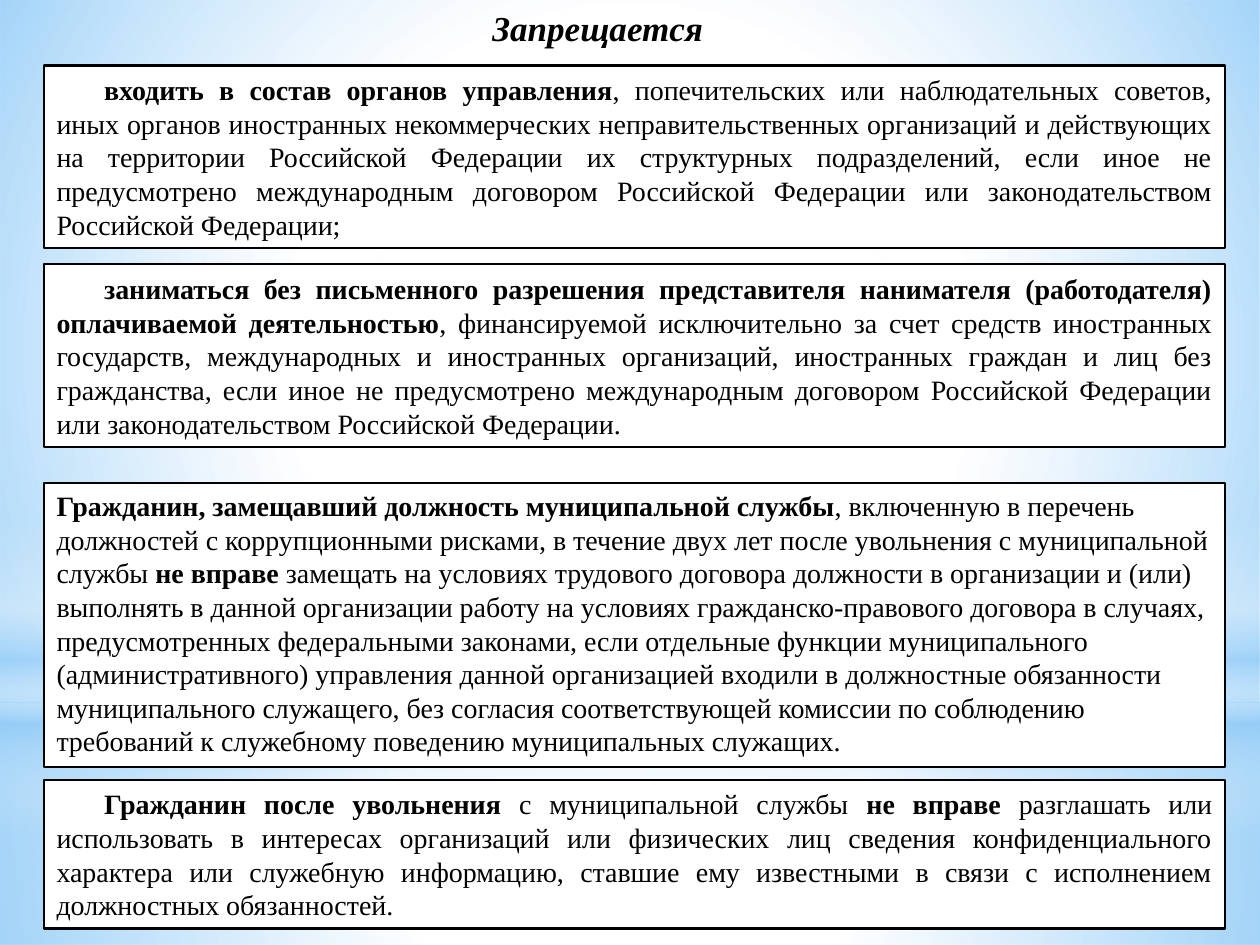
"""Build the slide on bans and limits in municipal service."""
from dataclasses import dataclass

from lxml import etree
from pptx import Presentation
from pptx.dml.color import RGBColor
from pptx.enum.shapes import MSO_SHAPE
from pptx.enum.text import MSO_ANCHOR, MSO_AUTO_SIZE, PP_ALIGN
from pptx.oxml.ns import qn
from pptx.util import Cm, Pt

RECT, OVAL = MSO_SHAPE.RECTANGLE, MSO_SHAPE.OVAL
TOP, MIDDLE = MSO_ANCHOR.TOP, MSO_ANCHOR.MIDDLE
LEFT, CENTER, JUSTIFY = PP_ALIGN.LEFT, PP_ALIGN.CENTER, PP_ALIGN.JUSTIFY
FIT = MSO_AUTO_SIZE.SHAPE_TO_FIT_TEXT
BLACK = RGBColor(0, 0, 0)
WHITE = RGBColor(255, 255, 255)
SKY = RGBColor(0x8B, 0xC9, 0xF7)
FONT = "Times New Roman"
WIDE, HIGH = 25.4, 19.05
EDGE, SPAN = 0.89, 23.8


@dataclass
class Glow:
    kind: MSO_SHAPE
    top: float
    height: float
    stops: list[tuple[int, RGBColor, int]]
    round: bool = True


@dataclass
class Rule:
    top: float
    height: float
    texts: list[str]
    inset: bool = True


GLOWS = [
    Glow(RECT, 14.17, 4.88, [(0, WHITE, 91), (37, WHITE, 76), (100, SKY, 79)]),
    Glow(RECT, 0, 14.17, [(0, WHITE, 89), (48, WHITE, 62), (100, SKY, 79)]),
    Glow(RECT, 10.46, 6.35, [(0, WHITE, 0), (29, WHITE, 30), (45, SKY, 40),
                             (55, WHITE, 26), (65, SKY, 60), (100, WHITE, 0)], False),
    Glow(OVAL, 4.45, 14.17, [(0, WHITE, 100), (56, WHITE, 0)]),
]

RULES = [
    Rule(1.32, 3.68, [
        "входить в состав органов управления",
        ", попечительских или наблюдательных советов, иных органов иностранных "
        "некоммерческих неправительственных организаций и действующих на территории "
        "Российской Федерации их структурных подразделений, если иное не предусмотрено "
        "международным договором Российской Федерации или законодательством "
        "Российской Федерации;"]),
    Rule(5.33, 3.68, [
        "заниматься без письменного разрешения представителя нанимателя "
        "(работодателя) оплачиваемой деятельностью",
        ", финансируемой исключительно за счет средств иностранных государств, "
        "международных и иностранных организаций, иностранных граждан и лиц без "
        "гражданства, если иное не предусмотрено международным договором Российской "
        "Федерации или законодательством Российской Федерации."]),
    Rule(9.73, 5.74, [
        "Гражданин, замещавший должность муниципальной службы",
        ", включенную в перечень должностей с коррупционными рисками, в течение двух "
        "лет после увольнения с муниципальной службы ",
        "не вправе ",
        "замещать на условиях трудового договора должности в организации и (или) "
        "выполнять в данной организации работу на условиях гражданско-правового "
        "договора в случаях, предусмотренных федеральными законами, если отдельные "
        "функции муниципального (административного) управления данной организацией "
        "входили в должностные обязанности муниципального служащего, без согласия "
        "соответствующей комиссии по соблюдению требований к служебному поведению "
        "муниципальных служащих."], False),
    Rule(15.72, 3, [
        "Гражданин после увольнения ",
        "с муниципальной службы ",
        "не вправе ",
        "разглашать или использовать в интересах организаций или физических лиц "
        "сведения конфиденциального характера или служебную информацию, ставшие ему "
        "известными в связи с исполнением должностных обязанностей."]),
]


def style(font, size: int, bold: bool) -> None:
    """Apply the common font settings."""
    font.name, font.size, font.bold = FONT, Pt(size), bold
    font.color.rgb = BLACK


def add_glow(slide, tree, rank: int, glow: Glow) -> None:
    """Draw one gradient layer and move it to the master."""
    shape = slide.shapes.add_shape(
        glow.kind, 0, Cm(glow.top), Cm(WIDE), Cm(glow.height))
    shape.shadow.inherit = False
    shape.line.fill.background()
    shape.fill.gradient()
    grad = shape.element.spPr.find(qn("a:gradFill"))
    for child in list(grad):
        grad.remove(child)
    stops = etree.SubElement(grad, qn("a:gsLst"))
    for place, color, alpha in glow.stops:
        stop = etree.SubElement(stops, qn("a:gs"), pos=str(place * 1000))
        tint = etree.SubElement(stop, qn("a:srgbClr"), val=str(color))
        etree.SubElement(tint, qn("a:alpha"), val=str(alpha * 1000))
    if glow.round:
        way = etree.SubElement(grad, qn("a:path"), {"path": "circle"})
        etree.SubElement(way, qn("a:fillToRect"),
                         dict.fromkeys("ltrb", "50000"))
    else:
        etree.SubElement(grad, qn("a:lin"), ang="5400000", scaled="0")
    shape.element.nvSpPr.cNvPr.set("id", str(20 + rank))
    tree.insert(2 + rank, shape.element)


def add_rule(slide, rule: Rule) -> None:
    """Draw one framed rule whose texts alternate bold and plain."""
    box = slide.shapes.add_shape(
        RECT, Cm(EDGE), Cm(rule.top), Cm(SPAN), Cm(rule.height))
    box.shadow.inherit = False
    box.fill.solid()
    box.fill.fore_color.rgb = WHITE
    box.line.color.rgb = BLACK
    box.line.width = Pt(1.25)
    frame = box.text_frame
    frame.word_wrap, frame.auto_size = True, FIT
    frame.vertical_anchor = MIDDLE if rule.inset else TOP
    para = frame.paragraphs[0]
    para.alignment = JUSTIFY if rule.inset else LEFT
    if rule.inset:
        props = para._p.get_or_add_pPr()
        props.set("marL", "0")
        props.set("indent", str(Cm(0.96)))
    for rank, text in enumerate(rule.texts):
        run = para.add_run()
        run.text = text
        style(run.font, 16, rank % 2 == 0)


def set_title(title) -> None:
    """Place and format the title."""
    title.left, title.top, title.width, title.height = (
        Cm(9.65), Cm(0), Cm(4.8), Cm(1.12))
    frame = title.text_frame
    frame.text = "Запрещается"
    frame.word_wrap, frame.auto_size = False, FIT
    frame.vertical_anchor = TOP
    para = frame.paragraphs[0]
    para.alignment = CENTER
    font = para.runs[0].font
    style(font, 20, True)
    font.italic = True


def main() -> None:
    """Build and save the deck."""
    deck = Presentation()
    deck.slide_width, deck.slide_height = Cm(WIDE), Cm(HIGH)
    slide = deck.slides.add_slide(deck.slide_layouts[5])
    tree = deck.slide_master.shapes.element
    for rank, glow in enumerate(GLOWS):
        add_glow(slide, tree, rank, glow)
    for rule in RULES:
        add_rule(slide, rule)
    set_title(slide.shapes.title)
    deck.save("out.pptx")


if __name__ == "__main__":
    main()
